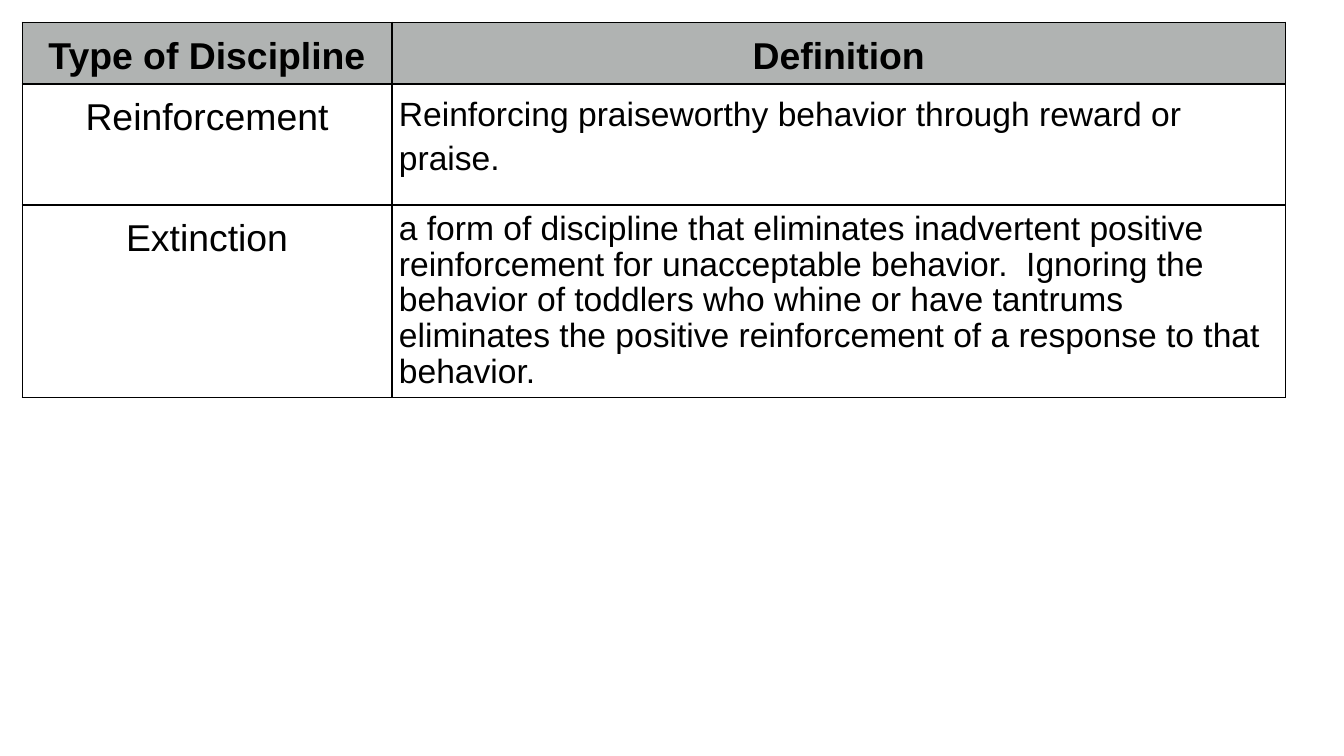
from lxml.etree import SubElement
from pptx import Presentation
from pptx.dml.color import RGBColor as RGB
from pptx.enum.text import PP_ALIGN as Align
from pptx.oxml.ns import qn
from pptx.util import Cm, Pt

COLORS = {"text": "000000", "border": "000000", "header": "B0B3B2"}
COL_WIDTHS = [6.99, 16.89]
ROW_HEIGHTS = [0.74, 2.29, 2.95]
HEADERS = ["Type of Discipline", "Definition"]
DISCIPLINES = [
    ("Reinforcement",
     "Reinforcing praiseworthy behavior through reward or praise.",
     {"spacing": 1.15}),
    ("Extinction",
     "a form of discipline that eliminates inadvertent positive "
     "reinforcement for unacceptable behavior.  Ignoring the behavior of "
     "toddlers who whine or have tantrums eliminates the positive "
     "reinforcement of a response to that behavior.",
     {"spacing": 0.95, "after": 11}),
]


def write(tf, text, size=20, bold=False, align=Align.CENTER, spacing=1.15, after=0):
    p = tf.paragraphs[0]
    p.alignment = align
    p.line_spacing = spacing
    p.space_after = Pt(after)
    r = p.add_run()
    r.text = text
    r.font.name = "Arial"
    r.font.size = Pt(size)
    r.font.bold = bold
    r.font.color.rgb = RGB.from_string(COLORS["text"])


def style_cell(cell, fill=None):
    cell.margin_left = cell.margin_right = Cm(0.13)
    cell.margin_top = cell.margin_bottom = Cm(0.13)
    tcPr = cell._tc.get_or_add_tcPr()
    for side in ("a:lnL", "a:lnR", "a:lnT", "a:lnB"):
        ln = SubElement(tcPr, qn(side), w=str(Pt(0.75)))
        SubElement(SubElement(ln, qn("a:solidFill")), qn("a:srgbClr"), val=COLORS["border"])
    if fill:
        cell.fill.solid()
        cell.fill.fore_color.rgb = RGB.from_string(fill)
    else:
        cell.fill.background()


def add_discipline_table(s, left, top, width, height):
    frame = s.shapes.add_table(len(ROW_HEIGHTS), len(COL_WIDTHS),
                               Cm(left), Cm(top), Cm(width), Cm(height))
    table = frame.table
    table.first_row = table.horz_banding = False
    for col, col_width in zip(table.columns, COL_WIDTHS):
        col.width = Cm(width * col_width / sum(COL_WIDTHS))
    for row, row_height in zip(table.rows, ROW_HEIGHTS):
        row.height = Cm(row_height)
    frame.height = Cm(height)

    for c, header in enumerate(HEADERS):
        cell = table.cell(0, c)
        style_cell(cell, COLORS["header"])
        write(cell.text_frame, header, bold=True)
    for i, (name, definition, layout) in enumerate(DISCIPLINES, 1):
        name_cell, definition_cell = table.cell(i, 0), table.cell(i, 1)
        style_cell(name_cell)
        write(name_cell.text_frame, name)
        style_cell(definition_cell)
        write(definition_cell.text_frame, definition, size=18, align=Align.LEFT, **layout)


def main():
    prs = Presentation()
    prs.slide_width, prs.slide_height = Cm(25.4), Cm(14.29)
    s = prs.slides.add_slide(prs.slide_layouts[6])
    add_discipline_table(s, 0.42, 0.42, 23.88, 7.42)
    prs.save("out.pptx")


if __name__ == "__main__":
    main()
